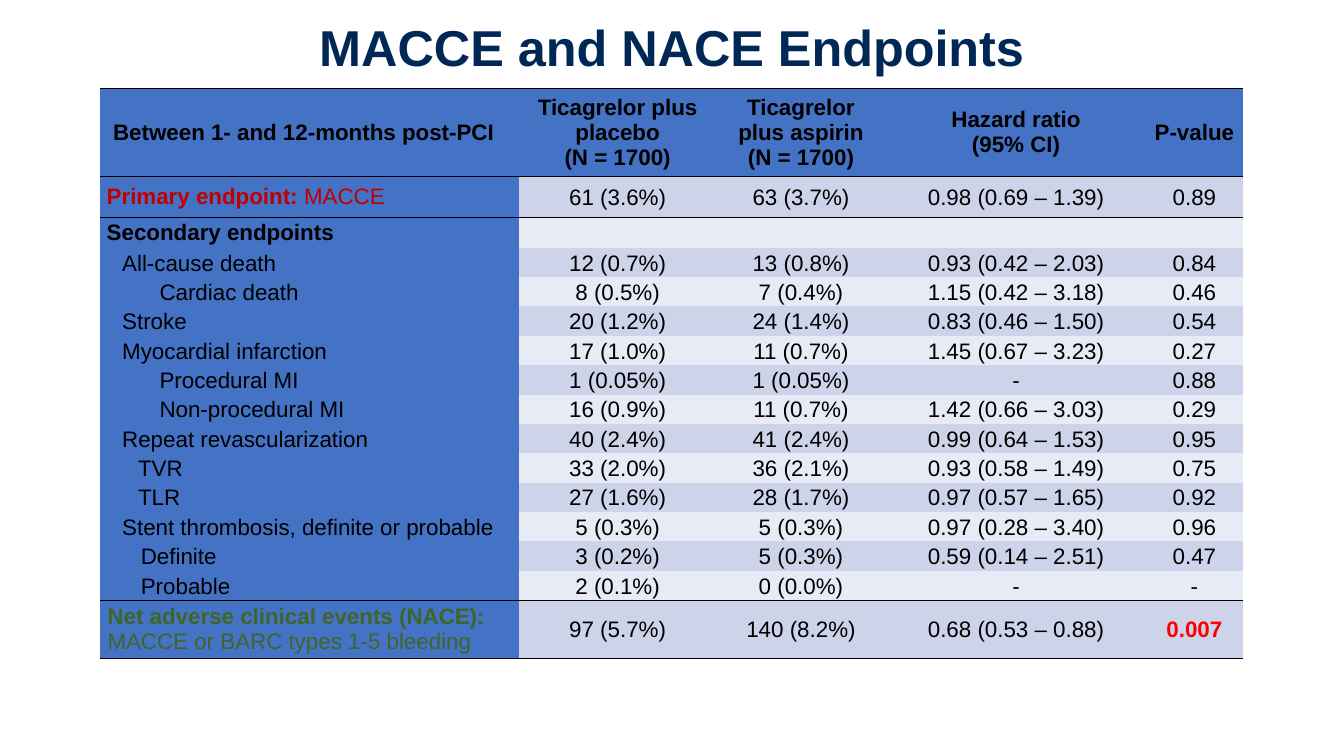
"""Build the MACCE and NACE endpoints slide."""
from dataclasses import dataclass

from lxml import etree
from pptx import Presentation
from pptx.dml.color import RGBColor
from pptx.enum.text import MSO_ANCHOR, PP_ALIGN
from pptx.oxml.ns import qn
from pptx.util import Cm, Pt

MIDDLE = MSO_ANCHOR.MIDDLE
CENTER = PP_ALIGN.CENTER
LEFT = PP_ALIGN.LEFT
NO_GRID_STYLE = "{2D5ABB26-0587-4C30-8999-92F81FD0307C}"


@dataclass(frozen=True)
class Theme:
    font: str = "Arial"
    title_size: int = 36
    table_size: int = 16
    title: str = "002856"
    text: str = "000000"
    rule: str = "000000"
    header: str = "4472C4"
    dark_band: str = "CDD4EA"
    light_band: str = "E8EBF5"
    primary: str = "C00000"
    net: str = "406529"
    significant: str = "FF0000"


THEME = Theme()

HEADERS = [
    ["Between 1- and 12-months post-PCI"],
    ["Ticagrelor plus placebo", "(N = 1700)"],
    ["Ticagrelor plus aspirin", "(N = 1700)"],
    ["Hazard ratio", "(95% CI)"],
    ["P-value"],
]
HEADER_INDENT = 0.16
COLUMN_WIDTHS = [10.57, 4.95, 4.29, 6.55, 2.44]
HEADER_HEIGHT, PRIMARY_HEIGHT, ROW_HEIGHT, NET_HEIGHT = 2.22, 1.03, 0.74, 1.47

PRIMARY_LABEL = [("Primary endpoint: ", True, THEME.primary), ("MACCE", False, THEME.primary)]
SECONDARY_LABEL = [("Secondary endpoints", True, THEME.text)]
NET_LABEL = [
    ("Net adverse clinical events (NACE): ", True, THEME.net),
    ("MACCE or BARC types 1-5 bleeding", False, THEME.net),
]
ENDPOINTS = [
    (PRIMARY_LABEL, 0, ["61 (3.6%)", "63 (3.7%)", "0.98 (0.69 – 1.39)", "0.89"]),
    (SECONDARY_LABEL, 0, []),
    ("All-cause death", 0.39, ["12 (0.7%)", "13 (0.8%)", "0.93 (0.42 – 2.03)", "0.84"]),
    ("Cardiac death", 1.33, ["8 (0.5%)", "7 (0.4%)", "1.15 (0.42 – 3.18)", "0.46"]),
    ("Stroke", 0.39, ["20 (1.2%)", "24 (1.4%)", "0.83 (0.46 – 1.50)", "0.54"]),
    ("Myocardial infarction", 0.39, ["17 (1.0%)", "11 (0.7%)", "1.45 (0.67 – 3.23)", "0.27"]),
    ("Procedural MI", 1.33, ["1 (0.05%)", "1 (0.05%)", "-", "0.88"]),
    ("Non-procedural MI", 1.33, ["16 (0.9%)", "11 (0.7%)", "1.42 (0.66 – 3.03)", "0.29"]),
    ("Repeat revascularization", 0.39, ["40 (2.4%)", "41 (2.4%)", "0.99 (0.64 – 1.53)", "0.95"]),
    ("TVR", 0.79, ["33 (2.0%)", "36 (2.1%)", "0.93 (0.58 – 1.49)", "0.75"]),
    ("TLR", 0.79, ["27 (1.6%)", "28 (1.7%)", "0.97 (0.57 – 1.65)", "0.92"]),
    ("Stent thrombosis, definite or probable", 0.39,
     ["5 (0.3%)", "5 (0.3%)", "0.97 (0.28 – 3.40)", "0.96"]),
    ("Definite", 0.86, ["3 (0.2%)", "5 (0.3%)", "0.59 (0.14 – 2.51)", "0.47"]),
    ("Probable", 0.86, ["2 (0.1%)", "0 (0.0%)", "-", "-"]),
    (NET_LABEL, 0.02, ["97 (5.7%)", "140 (8.2%)", "0.68 (0.53 – 0.88)", "0.007"]),
]


class EndpointSlide:
    def __init__(self, presentation, theme):
        self.theme = theme
        self.slide = presentation.slides.add_slide(presentation.slide_layouts[6])

    def apply(self, target, formats):
        for name, value in formats.items():
            setattr(target, name, value)

    def add_runs(self, paragraph, runs, size, alignment, spacing=1.0, indent=0):
        self.apply(paragraph, {"alignment": alignment, "line_spacing": spacing})
        if indent:
            properties = paragraph._p.get_or_add_pPr()
            properties.set("marL", str(Cm(indent)))
            properties.set("indent", "0")
        for text, bold, color in runs:
            run = paragraph.add_run()
            run.text = text
            self.apply(run.font, {"name": self.theme.font, "size": Pt(size), "bold": bold})
            run.font.color.rgb = RGBColor.from_string(color)

    def add_title(self, text, left, top, width, height):
        box = self.slide.shapes.add_textbox(Cm(left), Cm(top), Cm(width), Cm(height))
        self.apply(box.text_frame, {"word_wrap": True, "vertical_anchor": MIDDLE})
        runs = [(text, True, self.theme.title)]
        self.add_runs(box.text_frame.paragraphs[0], runs, self.theme.title_size, CENTER, 0.9)

    def add_table(self, left, top, widths, heights):
        frame = self.slide.shapes.add_table(
            len(heights), len(widths), Cm(left), Cm(top), Cm(sum(widths)), Cm(sum(heights)))
        table = frame.table
        self.apply(table, {"first_row": False, "horz_banding": False})
        table._tbl.tblPr.find(qn("a:tableStyleId")).text = NO_GRID_STYLE
        for column, width in zip(table.columns, widths):
            column.width = Cm(width)
        for row, height in zip(table.rows, heights):
            row.height = Cm(height)
        return table

    def add_border(self, cell, side):
        line = etree.SubElement(cell._tc.get_or_add_tcPr(), qn(f"a:{side}"), w=str(Pt(1)))
        fill = etree.SubElement(line, qn("a:solidFill"))
        etree.SubElement(fill, qn("a:srgbClr"), val=self.theme.rule)

    def fill_cell(self, cell, lines, fill, sides, alignment=CENTER, spacing=1.07, indent=0):
        self.apply(cell, {
            "margin_left": Cm(0.17), "margin_right": Cm(0.17),
            "margin_top": 0, "margin_bottom": 0, "vertical_anchor": MIDDLE})
        for side in sides:
            self.add_border(cell, side)
        cell.fill.solid()
        cell.fill.fore_color.rgb = RGBColor.from_string(fill)
        for index, runs in enumerate(lines):
            frame = cell.text_frame
            paragraph = frame.add_paragraph() if index else frame.paragraphs[0]
            self.add_runs(paragraph, runs, self.theme.table_size, alignment, spacing, indent)

    def add_endpoints(self, left, top):
        theme = self.theme
        heights = [HEADER_HEIGHT, PRIMARY_HEIGHT, *[ROW_HEIGHT] * (len(ENDPOINTS) - 2), NET_HEIGHT]
        table = self.add_table(left, top, COLUMN_WIDTHS, heights)
        last = len(ENDPOINTS)
        for column, texts in enumerate(HEADERS):
            lines = [[(text, True, theme.text)] for text in texts]
            alignment, indent = (CENTER, 0) if column else (LEFT, HEADER_INDENT)
            self.fill_cell(table.cell(0, column), lines, theme.header, ["lnT", "lnB"],
                           alignment, 1.0, indent)
        for row, (label, indent, values) in enumerate(ENDPOINTS, start=1):
            sides = ["lnT"] * (row in (1, last)) + ["lnB"] * (row >= last - 1)
            plain = isinstance(label, str)
            runs = [(label, False, theme.text)] if plain else label
            self.fill_cell(table.cell(row, 0), [runs], theme.header, sides, LEFT,
                           1.07 if plain else 1.0, indent)
            band = theme.dark_band if row % 2 else theme.light_band
            for column in range(1, len(HEADERS)):
                text = values[column - 1] if values else ""
                significant = text == "0.007"
                color = theme.significant if significant else theme.text
                lines = [[(text, significant, color)]] if text else []
                self.fill_cell(table.cell(row, column), lines, band, sides)


def main():
    presentation = Presentation()
    presentation.slide_width = Cm(33.87)
    presentation.slide_height = Cm(19.05)
    endpoint_slide = EndpointSlide(presentation, THEME)
    endpoint_slide.add_title("MACCE and NACE Endpoints", 0, 0.33, 33.87, 1.88)
    endpoint_slide.add_endpoints(2.52, 2.23)
    presentation.save("out.pptx")


if __name__ == "__main__":
    main()
